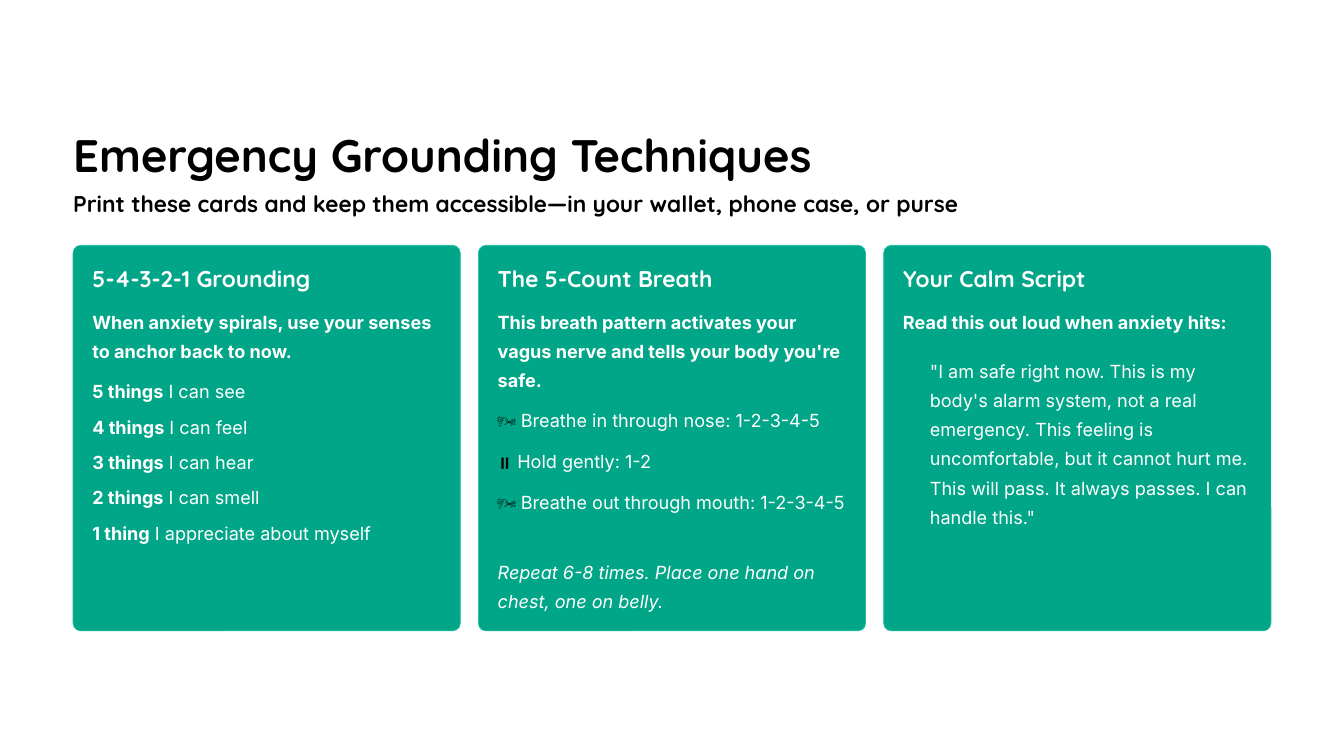
from pptx import Presentation
from pptx.dml.color import RGBColor
from pptx.enum.shapes import MSO_SHAPE
from pptx.enum.text import MSO_ANCHOR, MSO_AUTO_SIZE, PP_ALIGN
from pptx.util import Inches, Pt

ROUNDED = MSO_SHAPE.ROUNDED_RECTANGLE
TOP = MSO_ANCHOR.TOP
NO_AUTOFIT = MSO_AUTO_SIZE.NONE
LEFT = PP_ALIGN.LEFT

BLACK = RGBColor(0x00, 0x00, 0x00)
WHITE = RGBColor(0xFF, 0xFF, 0xFF)
GREEN = RGBColor(0x00, 0xA6, 0x87)
LIGHT_GREEN = RGBColor(0x19, 0xBF, 0xA0)

TITLE = {"name": "Quicksand", "size": Pt(39), "bold": True, "color": BLACK}
SUBTITLE = {**TITLE, "size": Pt(19.5)}
HEADING = {**SUBTITLE, "color": WHITE}
BODY = {"name": "Inter", "size": Pt(15.5), "bold": False, "color": WHITE}
STRONG = {**BODY, "bold": True}
EMPHASIS = {**BODY, "italic": True}
ICON = {**BODY, "color": BLACK}

MARGIN = 0.87
CONTENT_WIDTH = 14.26
CARD_TOP = 2.92
CARD_WIDTH = 4.61
CARD_HEIGHT = 4.59
PADDING_LEFT = 0.23
PADDING_TOP = 0.22
TEXT_WIDTH = 4.16

SENSES = [
    ("5 things", " I can see"),
    ("4 things", " I can feel"),
    ("3 things", " I can hear"),
    ("2 things", " I can smell"),
    ("1 thing", " I appreciate about myself"),
]
BREATHS = [
    ("🌬️", " Breathe in through nose: 1-2-3-4-5"),
    ("⏸️", " Hold gently: 1-2"),
    ("🌬️", " Breathe out through mouth: 1-2-3-4-5"),
]


def format_text(shape, box, runs, spacing):
    """Place a text shape in its box and fill it with formatted runs."""
    for name, length in zip(("left", "top", "width", "height"), box):
        setattr(shape, name, Inches(length))
    frame = shape.text_frame
    settings = {
        "margin_left": 0, "margin_top": 0, "margin_right": 0, "margin_bottom": 0,
        "word_wrap": True, "auto_size": NO_AUTOFIT, "vertical_anchor": TOP,
    }
    for name, value in settings.items():
        setattr(frame, name, value)
    paragraph = frame.paragraphs[0]
    paragraph.alignment = LEFT
    paragraph.line_spacing = Pt(spacing)
    for text, style in runs:
        run = paragraph.add_run()
        run.text = text
        for name, value in style.items():
            if name == "color":
                run.font.color.rgb = value
            else:
                setattr(run.font, name, value)


def add_text(slide, box, runs, spacing=25):
    """Add a text box holding one paragraph."""
    shape = slide.shapes.add_textbox(0, 0, 0, 0)
    format_text(shape, box, runs, spacing)


def add_header(slide, left, top):
    """Place the slide title and the subtitle below it."""
    format_text(slide.shapes.title, (left, top, 9, 0.68),
                [("Emergency Grounding Techniques", TITLE)], 48.5)
    subtitle = "Print these cards and keep them accessible—in your wallet, phone case, or purse"
    add_text(slide, (left, top + 0.76, 10.7, 0.34), [(subtitle, SUBTITLE)], 24)


def add_card(slide, left, top, heading, lead, lead_height):
    """Draw a card with its heading and bold lead text."""
    card = slide.shapes.add_shape(ROUNDED, Inches(left), Inches(top),
                                  Inches(CARD_WIDTH), Inches(CARD_HEIGHT))
    card.adjustments[0] = 0.02
    card.shadow.inherit = False
    card.fill.solid()
    card.fill.fore_color.rgb = GREEN
    card.line.color.rgb = LIGHT_GREEN
    card.line.width = Pt(0.6)
    text_left = left + PADDING_LEFT
    add_text(slide, (text_left, top + PADDING_TOP, 2.71, 0.34), [(heading, HEADING)], 24)
    add_text(slide, (text_left, top + 0.7, TEXT_WIDTH, lead_height), [(lead, STRONG)])


def add_rows(slide, left, top, span, rows, first_style):
    """Spread rows evenly over a span, with the first run in its own style."""
    pitch = span / (len(rows) - 1)
    for index, (first, rest) in enumerate(rows):
        add_text(slide, (left, top + index * pitch, TEXT_WIDTH, 0.35),
                 [(first, first_style), (rest, BODY)])


def add_senses_card(slide, left, top):
    """Build the card that counts down the senses."""
    add_card(slide, left, top, "5-4-3-2-1 Grounding",
             "When anxiety spirals, use your senses to anchor back to now.", 0.69)
    add_rows(slide, left + PADDING_LEFT, top + 1.52, 1.69, SENSES, STRONG)


def add_breath_card(slide, left, top):
    """Build the card with the breathing pattern."""
    add_card(slide, left, top, "The 5-Count Breath",
             "This breath pattern activates your vagus nerve and tells your body you're safe.",
             1.04)
    add_rows(slide, left + PADDING_LEFT, top + 1.87, 0.97, BREATHS, ICON)
    add_text(slide, (left + PADDING_LEFT, top + 3.67, TEXT_WIDTH, 0.69),
             [("Repeat 6-8 times. Place one hand on chest, one on belly.", EMPHASIS)])


def add_script_card(slide, left, top):
    """Build the card with the indented calming quote."""
    add_card(slide, left, top, "Your Calm Script",
             "Read this out loud when anxiety hits:", 0.35)
    quote = ('"I am safe right now. This is my body\'s alarm system, not a real emergency. '
             "This feeling is uncomfortable, but it cannot hurt me. This will pass. "
             'It always passes. I can handle this."')
    add_text(slide, (left + 0.55, top + 1.28, 3.83, 2.08), [(quote, BODY)])


def main():
    """Build and save the grounding techniques slide."""
    presentation = Presentation()
    presentation.slide_width = Inches(16)
    presentation.slide_height = Inches(9)
    slide = presentation.slides.add_slide(presentation.slide_layouts[5])
    slide.background.fill.solid()
    slide.background.fill.fore_color.rgb = WHITE
    add_header(slide, MARGIN, 1.49)
    builders = (add_senses_card, add_breath_card, add_script_card)
    pitch = (CONTENT_WIDTH - CARD_WIDTH) / (len(builders) - 1)
    for index, build_card in enumerate(builders):
        build_card(slide, MARGIN + index * pitch, CARD_TOP)
    presentation.save("out.pptx")


if __name__ == "__main__":
    main()
